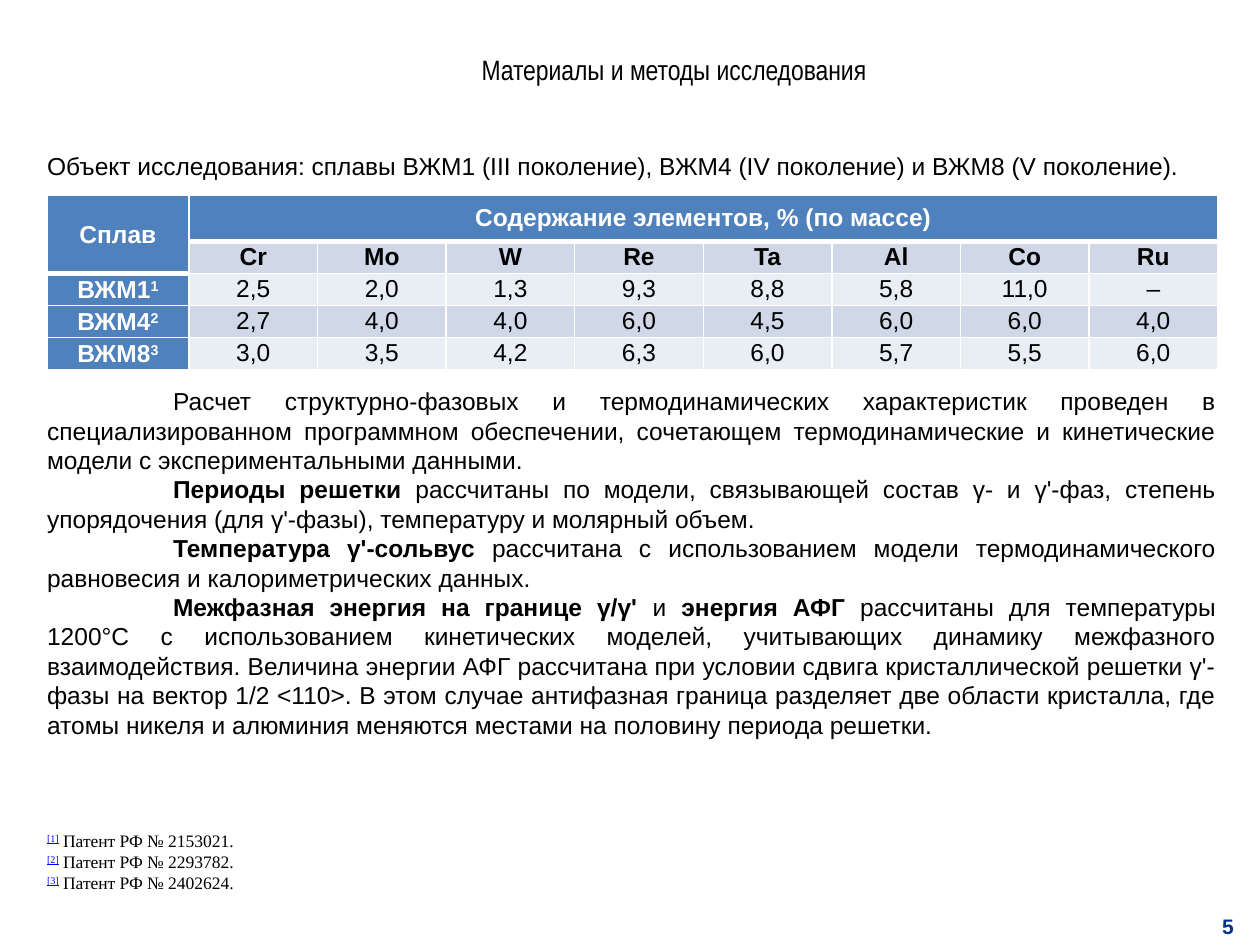
"""Builds the slide on research materials and methods for three nickel alloys."""
import pptx
import pptx.dml.color
import pptx.enum.text
import pptx.oxml.ns
import pptx.util
from lxml import etree

Pt = pptx.util.Pt
ALIGN = pptx.enum.text.PP_ALIGN
ANCHOR = pptx.enum.text.MSO_ANCHOR

COLORS = {"text": "000000", "white": "FFFFFF", "header": "4F81BD", "dark_band": "D0D8E8",
          "light_band": "E9EDF4", "link": "0000FF", "page": "00338D"}

TITLE = "Материалы и методы исследования"
PAGE_NUMBER = "5"
SUBJECT = "Объект исследования: сплавы ВЖМ1 (III поколение), ВЖМ4 (IV поколение) и ВЖМ8 (V поколение)."
METHODS = [
    [("Расчет структурно-фазовых и термодинамических характеристик проведен в специализированном "
      "программном обеспечении, сочетающем термодинамические и кинетические модели с "
      "экспериментальными данными.", False)],
    [("Периоды решетки", True),
     (" рассчитаны по модели, связывающей состав γ- и γ'-фаз, степень упорядочения (для γ'-фазы), "
      "температуру и молярный объем.", False)],
    [("Температура γ'-сольвус", True),
     (" рассчитана с использованием модели термодинамического равновесия и калориметрических "
      "данных.", False)],
    [("Межфазная энергия на границе γ/γ'", True), (" и ", False), ("энергия АФГ", True),
     (" рассчитаны для температуры 1200°C с использованием кинетических моделей, учитывающих "
      "динамику межфазного взаимодействия. Величина энергии АФГ рассчитана при условии сдвига "
      "кристаллической решетки γ'-фазы на вектор 1/2 <110>. В этом случае антифазная граница "
      "разделяет две области кристалла, где атомы никеля и алюминия меняются местами на половину "
      "периода решетки.", False)],
]
ALLOY_HEADER = "Сплав"
CONTENT_HEADER = "Содержание элементов, % (по массе)"
ELEMENTS = ["Cr", "Mo", "W", "Re", "Ta", "Al", "Co", "Ru"]
ALLOYS = [
    ("ВЖМ1", "1", ["2,5", "2,0", "1,3", "9,3", "8,8", "5,8", "11,0", "–"]),
    ("ВЖМ4", "2", ["2,7", "4,0", "4,0", "6,0", "4,5", "6,0", "6,0", "4,0"]),
    ("ВЖМ8", "3", ["3,0", "3,5", "4,2", "6,3", "6,0", "5,7", "5,5", "6,0"]),
]
PATENTS = ["2153021", "2293782", "2402624"]

TABLE_LEFT, TABLE_TOP = 26.8, 111.5
ALLOY_WIDTH, ELEMENT_WIDTH = 81.2, 73.5
HEADER_HEIGHT, ROW_HEIGHT = 26.4, 18.3


def add_run(paragraph, text, size=14, font="Arial", color="text", bold=False,
            underline=False, superscript=False):
    run = paragraph.add_run()
    run.text = text
    run.font.size = Pt(size)
    run.font.name = font
    run.font.bold = bold
    run.font.underline = underline
    run.font.color.rgb = pptx.dml.color.RGBColor.from_string(COLORS[color])
    if superscript:
        run.font._element.set("baseline", "30000")


def add_text_frame(slide, left, top, width, height, anchor=ANCHOR.TOP):
    text_frame = slide.shapes.add_textbox(Pt(left), Pt(top), Pt(width), Pt(height)).text_frame
    text_frame.word_wrap = True
    text_frame.vertical_anchor = anchor
    return text_frame


def add_paragraph(text_frame, alignment):
    first = text_frame.paragraphs[0]
    paragraph = text_frame.add_paragraph() if first.runs else first
    paragraph.alignment = alignment
    return paragraph


def add_line(slide, text, left, top, width, height, **text_format):
    text_frame = add_text_frame(slide, left, top, width, height)
    add_run(add_paragraph(text_frame, ALIGN.CENTER), text, **text_format)


def set_borders(cell, bottom_width=1):
    properties = cell._tc.get_or_add_tcPr()
    qualified = pptx.oxml.ns.qn
    for index, side in enumerate(("a:lnL", "a:lnR", "a:lnT", "a:lnB")):
        width = bottom_width if side == "a:lnB" else 1
        line = etree.Element(qualified(side), w=str(int(Pt(width))))
        fill = etree.SubElement(line, qualified("a:solidFill"))
        etree.SubElement(fill, qualified("a:srgbClr"), val=COLORS["white"])
        properties.insert(index, line)


def fill_cell(cell, text, fill, note="", line_spacing=None, bottom_width=1, **text_format):
    cell.margin_left = cell.margin_right = Pt(5)
    cell.margin_top = cell.margin_bottom = 0
    cell.vertical_anchor = ANCHOR.MIDDLE
    cell.fill.solid()
    cell.fill.fore_color.rgb = pptx.dml.color.RGBColor.from_string(COLORS[fill])
    set_borders(cell, bottom_width)
    paragraph = add_paragraph(cell.text_frame, ALIGN.CENTER)
    if line_spacing:
        paragraph.line_spacing = line_spacing
    add_run(paragraph, text, **text_format)
    if note:
        add_run(paragraph, note, superscript=True, **text_format)


def add_alloy_table(slide):
    widths = [ALLOY_WIDTH] + [ELEMENT_WIDTH] * len(ELEMENTS)
    heights = [HEADER_HEIGHT] + [ROW_HEIGHT] * (len(ALLOYS) + 1)
    table = slide.shapes.add_table(len(heights), len(widths), Pt(TABLE_LEFT), Pt(TABLE_TOP),
                                   Pt(sum(widths)), Pt(sum(heights))).table
    for column, width in zip(table.columns, widths):
        column.width = Pt(width)
    for row, height in zip(table.rows, heights):
        row.height = Pt(height)

    table.cell(0, 0).merge(table.cell(1, 0))
    table.cell(0, 1).merge(table.cell(0, len(ELEMENTS)))
    header_format = {"fill": "header", "color": "white", "bold": True}
    fill_cell(table.cell(0, 0), ALLOY_HEADER, line_spacing=1.07, bottom_width=3, **header_format)
    fill_cell(table.cell(0, 1), CONTENT_HEADER, bottom_width=3, **header_format)
    for column, element in enumerate(ELEMENTS, 1):
        fill_cell(table.cell(1, column), element, "dark_band", bold=True)
    for row, (alloy, note, values) in enumerate(ALLOYS, 2):
        fill_cell(table.cell(row, 0), alloy, note=note, line_spacing=1.07, **header_format)
        band = "light_band" if row % 2 == 0 else "dark_band"
        for column, value in enumerate(values, 1):
            fill_cell(table.cell(row, column), value, band)


def add_body(slide):
    text_frame = add_text_frame(slide, 19.8, 82.8, 682.2, 346.3)
    add_run(add_paragraph(text_frame, ALIGN.JUSTIFY), SUBJECT)
    for index, parts in enumerate(METHODS):
        paragraph = add_paragraph(text_frame, ALIGN.JUSTIFY)
        paragraph._p.get_or_add_pPr().set("indent", str(int(Pt(72))))
        if index == 0:
            paragraph.space_before = Pt(117.5)
        for text, bold in parts:
            add_run(paragraph, text, bold=bold)


def add_footnotes(slide):
    text_frame = add_text_frame(slide, 19.8, 470.2, 674.6, 43.9, ANCHOR.MIDDLE)
    for number, patent in enumerate(PATENTS, 1):
        paragraph = add_paragraph(text_frame, ALIGN.JUSTIFY)
        note_format = {"size": 10, "font": "Times New Roman"}
        add_run(paragraph, f"[{number}]", color="link", underline=True, superscript=True,
                **note_format)
        add_run(paragraph, f" Патент РФ № {patent}.", **note_format)


def main():
    presentation = pptx.Presentation()
    presentation.slide_width, presentation.slide_height = Pt(720), Pt(540)
    slide = presentation.slides.add_slide(presentation.slide_layouts[6])
    add_line(slide, TITLE, 161.3, 26.6, 447.8, 26.6, size=16, font="Arial Narrow")
    add_line(slide, PAGE_NUMBER, 687.6, 518.4, 28.1, 22.3, size=12, color="page", bold=True)
    add_body(slide)
    add_alloy_table(slide)
    add_footnotes(slide)
    presentation.save("out.pptx")


if __name__ == "__main__":
    main()
